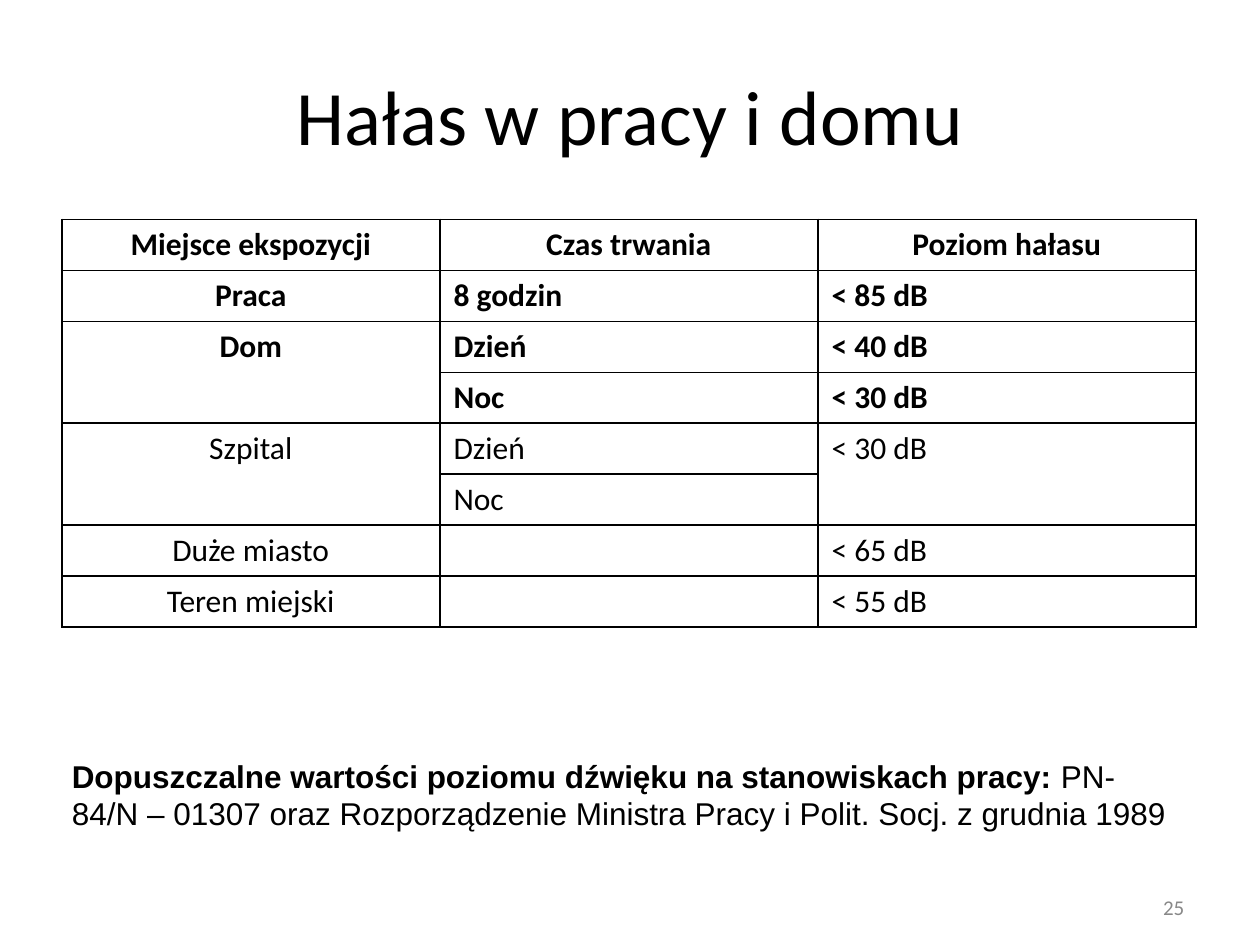
from dataclasses import dataclass

from lxml import etree
from pptx import Presentation
from pptx.dml.color import RGBColor
from pptx.enum.text import PP_ALIGN
from pptx.oxml.ns import qn
from pptx.util import Emu, Inches, Pt

LEFT, CENTER, RIGHT = PP_ALIGN.LEFT, PP_ALIGN.CENTER, PP_ALIGN.RIGHT
SLIDE_W, SLIDE_H = Inches(10), Inches(7.5)


@dataclass(frozen=True)
class Theme:
    ink: str = "000000"
    muted: str = "888888"
    heading_font: str = "Calibri"
    note_font: str = "Arial"
    title_size: float = 44
    body_size: float = 18
    number_size: float = 12
    border_width: float = 1


@dataclass(frozen=True)
class Area:
    """Position and size as shares of the slide."""
    left: float
    top: float
    width: float
    height: float

    def box(self) -> tuple[Emu, Emu, Emu, Emu]:
        return (Emu(int(self.left * SLIDE_W)), Emu(int(self.top * SLIDE_H)),
                Emu(int(self.width * SLIDE_W)), Emu(int(self.height * SLIDE_H)))


@dataclass(frozen=True)
class Entry:
    """A table cell; rows is the number of grid rows it spans."""
    row: int
    col: int
    text: str
    rows: int = 1


THEME = Theme()
TITLE = Area(0.22, 0.07, 0.56, 0.1)
LIMITS = Area(0.049, 0.232, 0.9, 0.432)
NOTE = Area(0.057, 0.798, 0.89, 0.084)
NUMBER = Area(0.88, 0.944, 0.06, 0.027)

GRID_ROWS, GRID_COLS = 8, 3
BOLD_ROWS = 4
ENTRIES = [
    Entry(0, 0, "Miejsce ekspozycji"), Entry(0, 1, "Czas trwania"), Entry(0, 2, "Poziom hałasu"),
    Entry(1, 0, "Praca"), Entry(1, 1, "8 godzin"), Entry(1, 2, "< 85 dB"),
    Entry(2, 0, "Dom", rows=2), Entry(2, 1, "Dzień"), Entry(2, 2, "< 40 dB"),
    Entry(3, 1, "Noc"), Entry(3, 2, "< 30 dB"),
    Entry(4, 0, "Szpital", rows=2), Entry(4, 1, "Dzień"), Entry(4, 2, "< 30 dB", rows=2),
    Entry(5, 1, "Noc"),
    Entry(6, 0, "Duże miasto"), Entry(6, 2, "< 65 dB"),
    Entry(7, 0, "Teren miejski"), Entry(7, 2, "< 55 dB"),
]
NOTE_LINES = [
    [("Dopuszczalne wartości poziomu dźwięku na stanowiskach pracy: ", True), ("PN-", False)],
    [("84/N – 01307 oraz Rozporządzenie Ministra Pracy i Polit. Socj. z grudnia 1989", False)],
]


def style(paragraph, font: str, size: float, color: str = THEME.ink,
          align: PP_ALIGN = LEFT) -> None:
    paragraph.alignment = align
    paragraph.font.name = font
    paragraph.font.size = Pt(size)
    paragraph.font.color.rgb = RGBColor.from_string(color)


def add_text_frame(slide, area: Area):
    frame = slide.shapes.add_textbox(*area.box()).text_frame
    frame.word_wrap = True
    frame.margin_left = frame.margin_right = frame.margin_bottom = 0
    frame.margin_top = Inches(0.02)
    return frame


def add_line(slide, area: Area, text: str, size: float, color: str, align: PP_ALIGN) -> None:
    paragraph = add_text_frame(slide, area).paragraphs[0]
    paragraph.text = text
    style(paragraph, THEME.heading_font, size, color, align)


def outline_cell(cell) -> None:
    properties = cell._tc.get_or_add_tcPr()
    for position, side in enumerate(("a:lnL", "a:lnR", "a:lnT", "a:lnB")):
        line = etree.Element(qn(side), w=str(Pt(THEME.border_width)))
        fill = etree.SubElement(line, qn("a:solidFill"))
        etree.SubElement(fill, qn("a:srgbClr"), val=THEME.ink)
        properties.insert(position, line)


def add_limits_table(slide) -> None:
    table = slide.shapes.add_table(GRID_ROWS, GRID_COLS, *LIMITS.box()).table
    table.first_row = table.horz_banding = False
    for entry in ENTRIES:
        cell = table.cell(entry.row, entry.col)
        cell.text = entry.text
        if entry.rows > 1:
            cell.merge(table.cell(entry.row + entry.rows - 1, entry.col))
    for row in range(GRID_ROWS):
        for col in range(GRID_COLS):
            cell = table.cell(row, col)
            centered = row == 0 or col == 0
            cell.margin_left = 0 if centered else Inches(0.11)
            cell.margin_right = cell.margin_bottom = 0
            cell.margin_top = Inches(0.05)
            cell.fill.background()
            outline_cell(cell)
            paragraph = cell.text_frame.paragraphs[0]
            style(paragraph, THEME.heading_font, THEME.body_size,
                  align=CENTER if centered else LEFT)
            paragraph.font.bold = row < BOLD_ROWS


def add_note(slide) -> None:
    frame = add_text_frame(slide, NOTE)
    for index, line in enumerate(NOTE_LINES):
        paragraph = frame.add_paragraph() if index else frame.paragraphs[0]
        style(paragraph, THEME.note_font, THEME.body_size)
        for text, bold in line:
            run = paragraph.add_run()
            run.text = text
            run.font.bold = bold


def main() -> None:
    deck = Presentation()
    deck.slide_width, deck.slide_height = SLIDE_W, SLIDE_H
    slide = deck.slides.add_slide(deck.slide_layouts[6])
    add_line(slide, TITLE, "Hałas w pracy i domu", THEME.title_size, THEME.ink, CENTER)
    add_limits_table(slide)
    add_note(slide)
    add_line(slide, NUMBER, "25", THEME.number_size, THEME.muted, RIGHT)
    deck.save("out.pptx")


if __name__ == "__main__":
    main()
